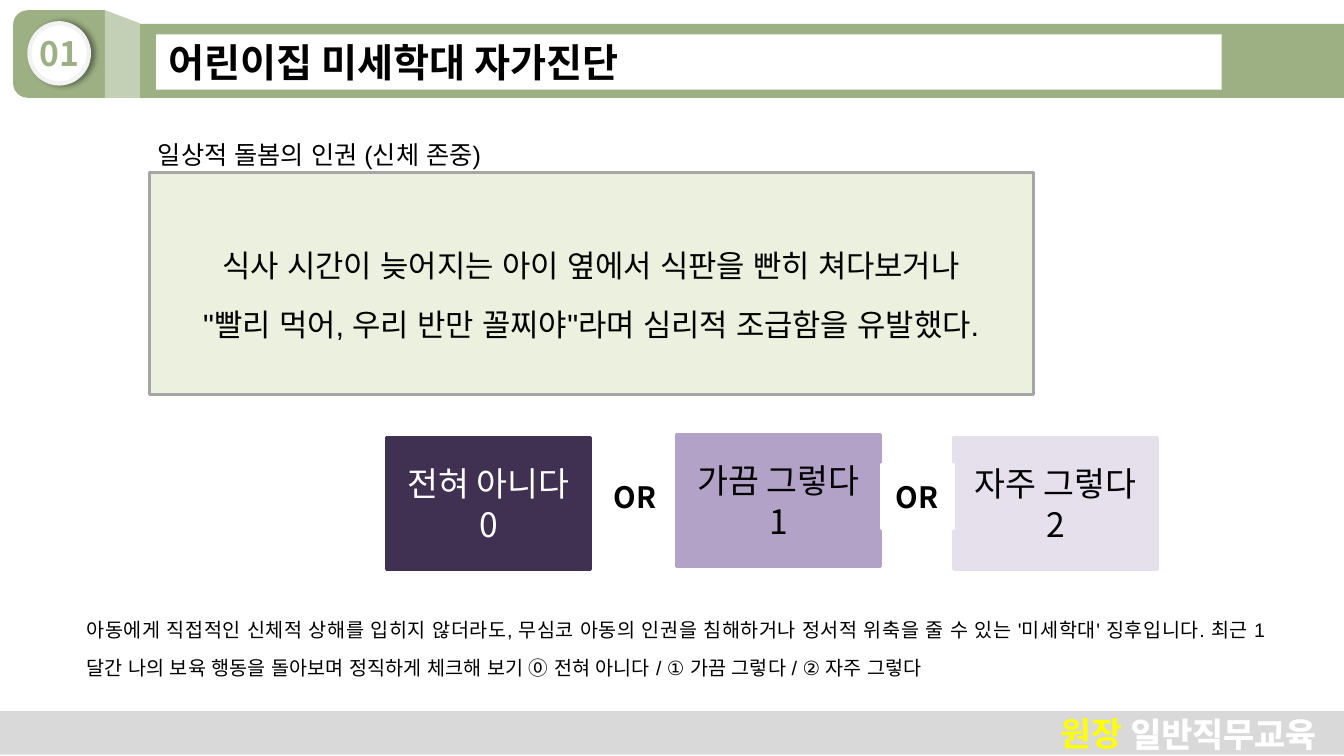
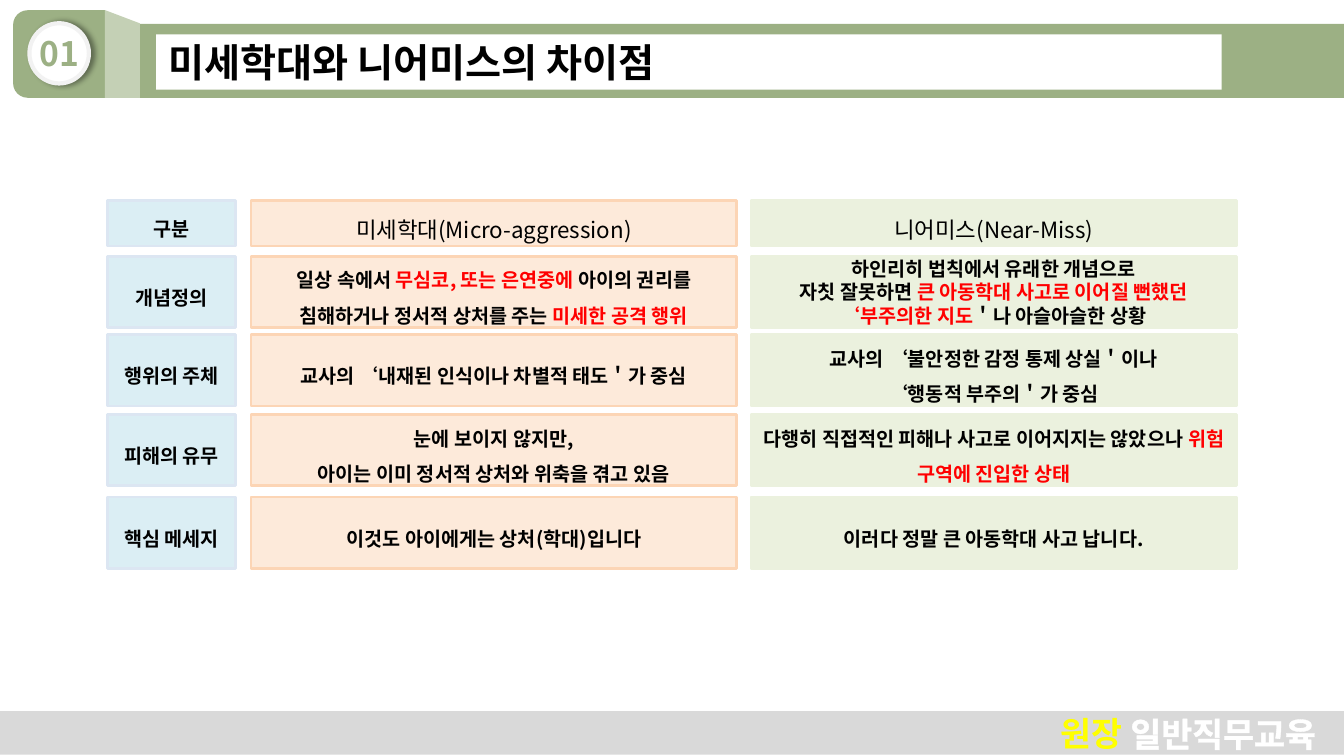
from lxml import etree
from pptx import Presentation
from pptx.dml.color import RGBColor
from pptx.enum import shapes, text
from pptx.oxml import ns
from pptx.util import Pt

KOREAN = "Noto Sans CJK KR"
DIGITS = "Noto Sans CJK SC"
BODY = "Arial"
BLACK, WHITE, RED, YELLOW = "000000", "FFFFFF", "FF0000", "FFFF00"
GREEN, LIGHT_GREEN, PALE_GREEN = "9CB084", "C4D0B5", "EBF1DE"
GREY, FOOTER_GREY, RING_GREY = "A6A6A6", "D9D9D9", "F2F2F2"
SHAPE = shapes.MSO_SHAPE
ALIGN = text.PP_ALIGN
ANCHOR = text.MSO_ANCHOR

COLUMNS = [
    (77, 91, "DBEEF4", "DCE6F2"),
    (179.3, 347, "FDEADA", "FCD5B5"),
    (536.4, 347, PALE_GREEN, PALE_GREEN),
]
ROW_TOPS = [183, 239, 296, 355]
ROW_HEIGHT = 51
HEADINGS = [
    ("구분", 14, True),
    ("미세학대(Micro-aggression)", 16, False),
    ("니어미스(Near-Miss)", 16, False),
]
ROWS = [
    (
        [["개념정의"]],
        [
            ["일상 속에서 ", ("무심코, 또는 은연중에 ", RED), "아이의 권리를"],
            ["침해하거나 정서적 상처를 주는 ", ("미세한 공격 행위", RED)],
        ],
        [
            ["하인리히 법칙에서 유래한 개념으로"],
            ["자칫 잘못하면 ", ("큰 아동학대 사고로 이어질 뻔했던", RED)],
            [("‘부주의한 지도", RED), "＇나 아슬아슬한 상황"],
        ],
    ),
    (
        [["행위의 주체"]],
        [["교사의 ‘내재된 인식이나 차별적 태도＇가 중심"]],
        [["교사의 ‘불안정한 감정 통제 상실＇이나"], ["‘행동적 부주의＇가 중심"]],
    ),
    (
        [["피해의 유무"]],
        [["눈에 보이지 않지만,"], ["아이는 이미 정서적 상처와 위축을 겪고 있음"]],
        [["다행히 직접적인 피해나 사고로 이어지지는 않았으나 ",
          ("위험 구역에 진입한 상태", RED)]],
    ),
    (
        [["핵심 메세지"]],
        [["이것도 아이에게는 상처(학대)입니다"]],
        [["이러다 정말 큰 아동학대 사고 납니다."]],
    ),
]


def rgb(value):
    """Turn a hex string into a colour."""
    return RGBColor.from_string(value)


def add_element(parent, tag, **attributes):
    """Append a drawing element with attributes to its parent."""
    return etree.SubElement(parent, ns.qn(tag), attributes)


def style_font(font, size, name, color, bold):
    """Format a font for Latin and East Asian letters."""
    font.size = Pt(size)
    font.bold = bold
    font.color.rgb = rgb(color)
    font.name = name


def write(shape, paragraphs, size, name=KOREAN, color=BLACK, bold=False,
          align=ALIGN.CENTER, spacing=None, anchor=ANCHOR.MIDDLE):
    """Fill a shape with paragraphs made of plain or coloured runs."""
    frame = shape.text_frame
    frame.word_wrap = True
    frame.vertical_anchor = anchor
    for index, parts in enumerate(paragraphs):
        paragraph = frame.add_paragraph() if index else frame.paragraphs[0]
        paragraph.alignment = align
        if spacing:
            paragraph.line_spacing = spacing
        for part in parts:
            words, run_color = (part, color) if isinstance(part, str) else part
            run = paragraph.add_run()
            run.text = words
            style_font(run.font, size, name, run_color, bold)
            add_element(run.font._element, "a:ea", typeface=name)


def paint(shape, fill, line=None, width=2):
    """Give a shape a flat fill and an optional outline."""
    shape.shadow.inherit = False
    shape.fill.solid()
    shape.fill.fore_color.rgb = rgb(fill)
    if line:
        shape.line.color.rgb = rgb(line)
        shape.line.width = Pt(width)
    else:
        shape.line.fill.background()


def add_box(slide, box, fill, line=None, width=2, kind=SHAPE.RECTANGLE):
    """Add a painted preset shape."""
    shape = slide.shapes.add_shape(kind, *map(Pt, box))
    paint(shape, fill, line, width)
    return shape


def add_text(slide, box, paragraphs, size, **style):
    """Add a text box."""
    shape = slide.shapes.add_textbox(*map(Pt, box))
    write(shape, paragraphs, size, anchor=ANCHOR.TOP, **style)
    return shape


def add_shadow(shape):
    """Cast a soft shadow to the right of a shape."""
    effects = shape.element.spPr.find(ns.qn("a:effectLst"))
    shadow = add_element(effects, "a:outerShdw", blurRad=str(Pt(4)),
                         dist=str(Pt(3)), dir="0", algn="l", rotWithShape="0")
    color = add_element(shadow, "a:srgbClr", val=BLACK)
    add_element(color, "a:alpha", val="40000")


def outline_text(run, color):
    """Draw a thin outline around the letters of a run."""
    line = etree.Element(ns.qn("a:ln"), w=str(Pt(0.75)))
    fill = add_element(line, "a:solidFill")
    add_element(fill, "a:srgbClr", val=color)
    run.font._element.insert(0, line)


def add_footer(slide):
    """Add the grey footer band and the course name."""
    add_box(slide, (0, 508, 960, 31), FOOTER_GREY)
    label = add_text(slide, (474, 506, 473, 36),
                     [[("원장", YELLOW), " 일반직무교육"]], 24,
                     color=WHITE, bold=True, align=ALIGN.RIGHT)
    for run in label.text_frame.paragraphs[0].runs:
        outline_text(run, WHITE)


def add_header(slide):
    """Add the folded green ribbon and the numbered badge."""
    tab = add_box(slide, (10.8, 5.8, 62.6, 65.5), GREEN,
                  kind=SHAPE.ROUND_2_SAME_RECTANGLE)
    tab.rotation = 270
    outline = slide.shapes.build_freeform(Pt(75), Pt(70), 1.0)
    outline.add_line_segments(
        [(Pt(x), Pt(y)) for x, y in [(75, 7.2), (100, 16.7), (100, 70)]])
    paint(outline.convert_to_shape(), LIGHT_GREEN)
    band = add_box(slide, (100, 17, 860, 53), GREEN, kind=SHAPE.PENTAGON)
    band.adjustments[0] = 0
    badge = add_box(slide, (21, 16.6, 42.5, 43), WHITE, RING_GREY, 3, SHAPE.OVAL)
    add_shadow(badge)
    frame = badge.text_frame
    frame.margin_left = frame.margin_right = 0
    frame.margin_top = frame.margin_bottom = 0
    write(badge, [["01"]], 24, name=DIGITS, color=GREEN, bold=True)


def prepare_layout(layout, slide):
    """Draw the shared bands once and move them to the layout."""
    for holder in list(layout.placeholders):
        if holder.placeholder_format.type != shapes.PP_PLACEHOLDER.TITLE:
            layout.shapes.element.remove(holder.element)
    add_footer(slide)
    add_header(slide)
    for shape in list(slide.shapes):
        if not shape.is_placeholder:
            layout.shapes.element.append(shape.element)


def set_title(slide, words):
    """Place and format the title."""
    title = slide.shapes.title
    title.left, title.top, title.width, title.height = map(
        Pt, (111.6, 24.5, 761, 39.6))
    title.fill.solid()
    title.fill.fore_color.rgb = rgb(WHITE)
    frame = title.text_frame
    frame.margin_left = frame.margin_right = Pt(8.6)
    frame.margin_top = frame.margin_bottom = Pt(4.3)
    write(title, [[words]], 28, bold=True, align=ALIGN.LEFT)


def fill_checklist(slide):
    """Build the self-check question with its three answers."""
    set_title(slide, "어린이집 미세학대 자가진단")
    question = add_box(slide, (106.6, 123, 631.4, 159), PALE_GREEN, GREY)
    write(question, [
        ["식사 시간이 늦어지는 아이 옆에서 식판을 빤히 쳐다보거나"],
        ['"빨리 먹어, 우리 반만 꼴찌야"라며 심리적 조급함을 유발했다.'],
    ], 22, name=BODY, spacing=1.6)
    answers = [
        (275.8, 312.5, "전혀 아니다", "403152", WHITE),
        (483, 310.3, "가끔 그렇다", "B3A2C7", BLACK),
        (681, 312.5, "자주 그렇다", "E6E0EC", BLACK),
    ]
    for score, (left, top, words, fill, color) in enumerate(answers):
        answer = add_box(slide, (left, top, 146, 94.3), fill, fill)
        write(answer, [[words], [str(score)]], 24, color=color)
    for left in (427.7, 629.3):
        choice = add_box(slide, (left, 332, 52, 45.4), WHITE, WHITE)
        write(choice, [["OR"]], 21, bold=True)
    notes = {"name": BODY, "align": ALIGN.JUSTIFY, "spacing": 1.6}
    add_text(slide, (54.7, 427.7, 856, 57.6), [[
        "아동에게 직접적인 신체적 상해를 입히지 않더라도, 무심코 아동의 인권을 "
        "침해하거나 정서적 위축을 줄 수 있는 '미세학대' 징후입니다. 최근 1달간 "
        "나의 보육 행동을 돌아보며 정직하게 체크해 보기 ⓪ 전혀 아니다 / "
        "① 가끔 그렇다 / ② 자주 그렇다"]], 14, **notes)
    add_text(slide, (105.8, 82.8, 490, 37.4),
             [["일상적 돌봄의 인권 (신체 존중)"]], 18, **notes)


def fill_comparison(slide):
    """Build the grid that compares the two notions."""
    set_title(slide, "미세학대와 니어미스의 차이점")
    for index, (left, width, fill, line) in enumerate(COLUMNS):
        words, size, bold = HEADINGS[index]
        heading = add_box(slide, (left, 143.3, width, 32.4), fill, line)
        write(heading, [[words]], size, bold=bold, spacing=1.5)
        for top, row in zip(ROW_TOPS, ROWS):
            cell = add_box(slide, (left, top, width, ROW_HEIGHT), fill, line)
            spacing = 1.5 if len(row[index]) < 3 else None
            write(cell, row[index], 14, bold=True, spacing=spacing)


def main():
    """Build and save the presentation."""
    presentation = Presentation()
    presentation.slide_width, presentation.slide_height = Pt(960), Pt(540)
    layout = presentation.slide_layouts[5]
    checklist = presentation.slides.add_slide(layout)
    prepare_layout(layout, checklist)
    fill_checklist(checklist)
    fill_comparison(presentation.slides.add_slide(layout))
    presentation.save("out.pptx")


if __name__ == "__main__":
    main()
